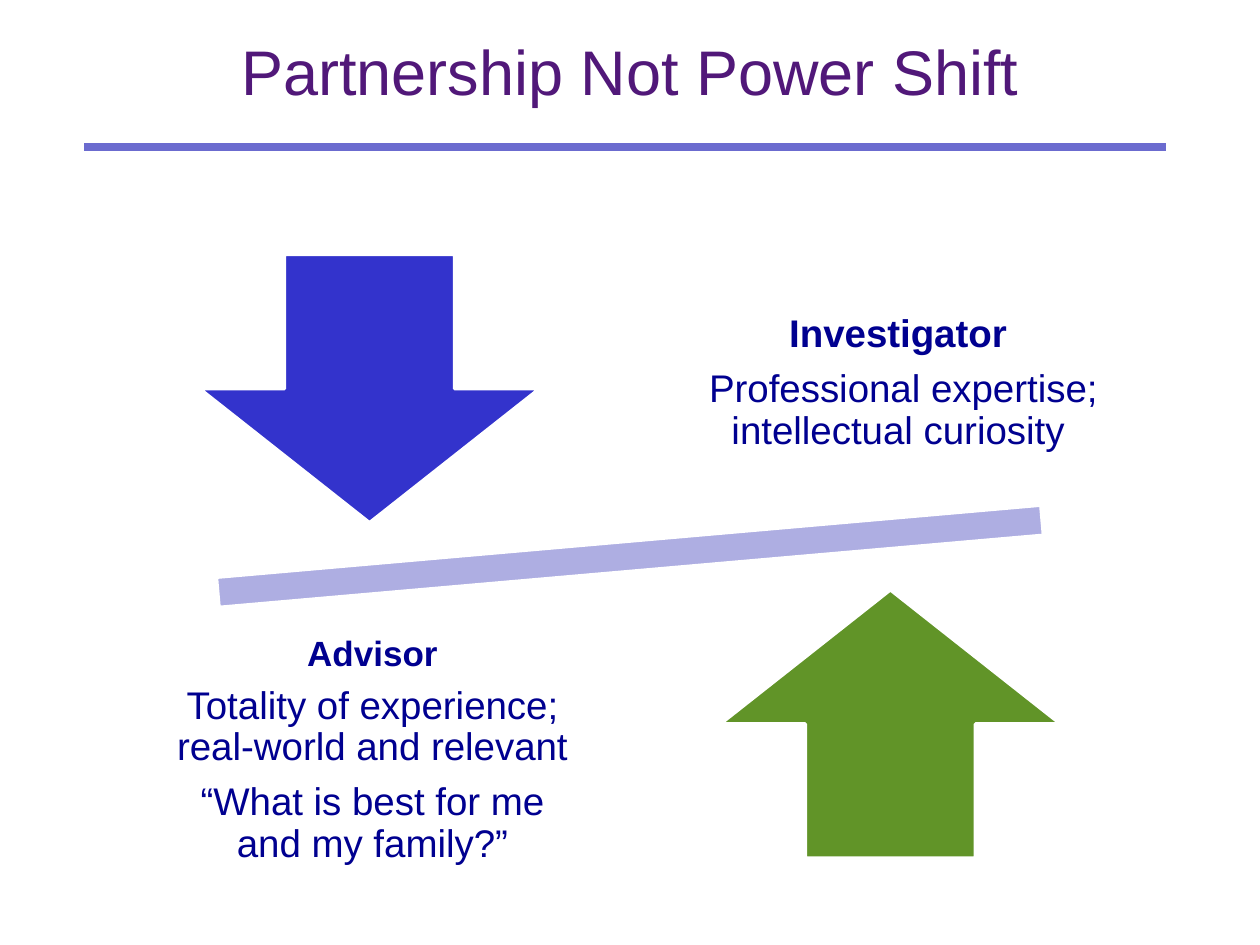
from lxml import etree
from pptx import Presentation
from pptx.dml.color import RGBColor
from pptx.enum.shapes import MSO_CONNECTOR, MSO_SHAPE
from pptx.enum.text import MSO_ANCHOR, PP_ALIGN
from pptx.oxml.ns import qn
from pptx.util import Cm, Pt

DOWN, UP, MINUS = MSO_SHAPE.DOWN_ARROW, MSO_SHAPE.UP_ARROW, MSO_SHAPE.MATH_MINUS
STRAIGHT = MSO_CONNECTOR.STRAIGHT
CENTER = PP_ALIGN.CENTER
TOP, MIDDLE = MSO_ANCHOR.TOP, MSO_ANCHOR.MIDDLE
FONT = "Arial"
NAVY = "000090"


def rgb(value):
    return RGBColor.from_string(value)


def add_shape(slide, kind, box, fill, rotation=0):
    sp = slide.shapes.add_shape(kind, *map(Cm, box))
    sp.shadow.inherit = False
    sp.rotation = rotation
    sp.fill.solid()
    sp.fill.fore_color.rgb = rgb(fill)
    sp.line.color.rgb = rgb("FFFFFF")
    sp.line.width = Pt(2)


def add_text(slide, box, lines, color, anchor, spacing, gap=0.0, inset=0.25):
    tf = slide.shapes.add_textbox(*map(Cm, box)).text_frame
    tf.word_wrap = True
    tf.vertical_anchor = anchor
    tf.margin_left = tf.margin_right = Cm(inset)
    if anchor == MIDDLE:
        tf.margin_top = tf.margin_bottom = Cm(inset)
    tf.text = "\n".join(text for text, _, _ in lines)
    for p, (_, size, bold) in zip(tf.paragraphs, lines):
        p.alignment = CENTER
        p.line_spacing = spacing
        p.space_after = Pt(size * gap)
        font = p.runs[0].font
        font.name = FONT
        font.size = Pt(size)
        font.bold = bold
        font.color.rgb = rgb(color)


def add_heading(slide, box):
    left, top, width, height = box
    add_text(slide, box, [("Partnership Not Power Shift", 36, False)],
             "511879", TOP, 0.85)
    x, y = left + 0.43, Cm(top + 2.21)
    rule = slide.shapes.add_connector(
        STRAIGHT, Cm(x), y, Cm(x + width - 1.06), y)
    rule.line.color.rgb = rgb("6B6BCF")
    rule.line.width = Pt(4.5)
    etree.SubElement(rule._element.spPr, qn("a:effectLst"))


def add_balance(slide, box):
    left, top, width, height = box
    arrow_w, arrow_h, indent, bar_h = 6.86, 5.41, 2.67, 2.6
    add_shape(slide, MINUS, (left, top + (height - bar_h) / 2, width, bar_h),
              "AEAEE2", 355)
    add_shape(slide, DOWN, (left + indent, top, arrow_w, arrow_h), "3333CC")
    add_shape(slide, UP, (left + width - indent - arrow_w,
                          top + height - arrow_h, arrow_w, arrow_h), "619428")
    roles = [
        ((11.99, 0.81, 9.53, 3.58), [
            ("Investigator", 22, True),
            (" Professional expertise; intellectual curiosity", 22, False),
        ]),
        ((1.83, 7.16, 8.66, 5.69), [
            ("Advisor", 20, True),
            ("Totality of experience; real-world and relevant", 22, False),
            ("“What is best for me and my family?”", 22, False),
        ]),
    ]
    for (x, y, w, h), lines in roles:
        add_text(slide, (left + x, top + y, w, h), lines, NAVY, MIDDLE, 0.9,
                 0.35, 0.36)


def main():
    prs = Presentation()
    prs.slide_width, prs.slide_height = Cm(25.4), Cm(19.05)
    slide = prs.slides.add_slide(prs.slide_layouts[6])
    add_heading(slide, (1.27, 0.76, 22.86, 3.18))
    add_balance(slide, (1.35, 5.13, 22.7, 12.17))
    prs.save("out.pptx")


if __name__ == "__main__":
    main()
